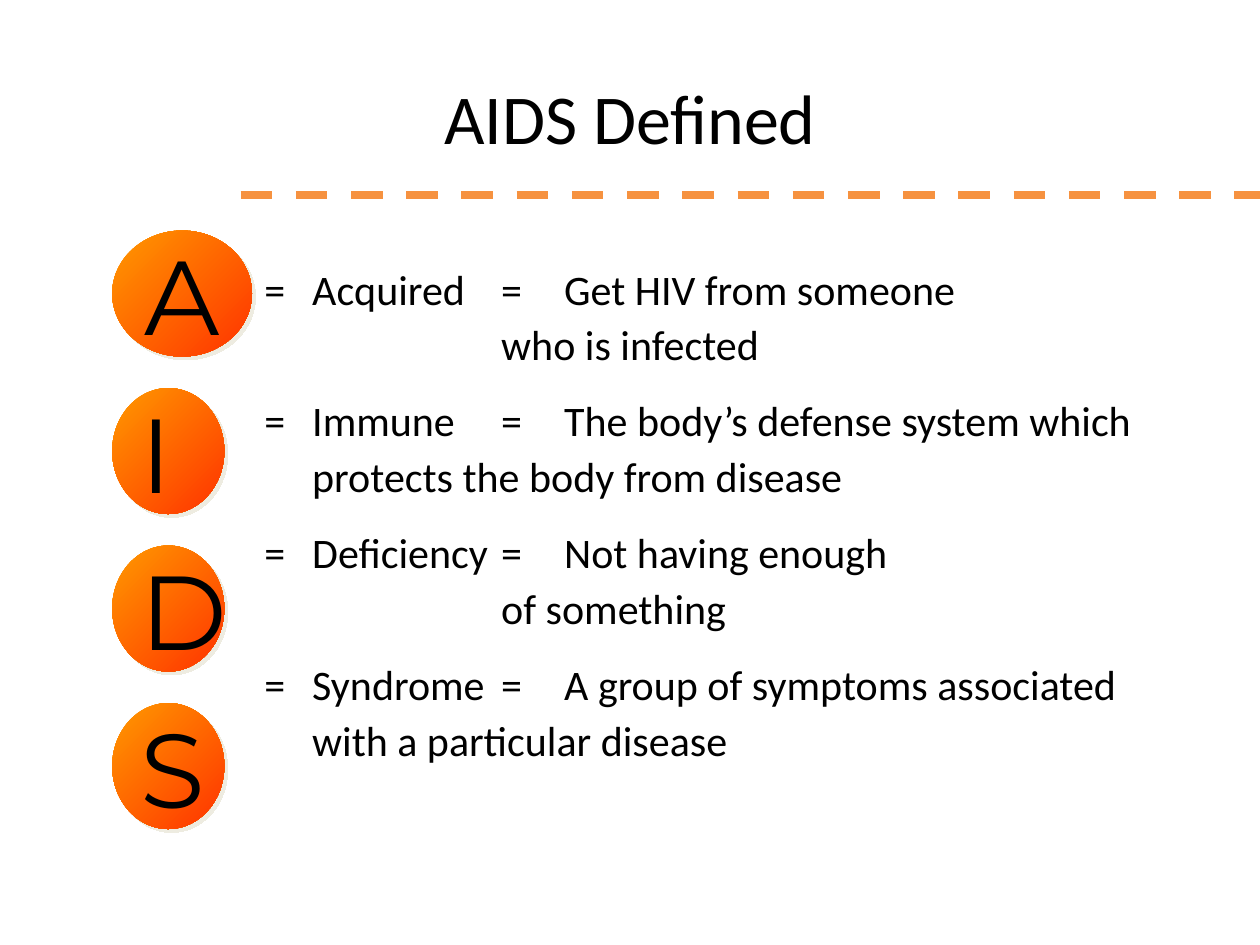
from lxml import etree
from pptx import Presentation
from pptx import util as u
from pptx.dml.color import RGBColor
from pptx.enum import dml, shapes, text
from pptx.oxml.ns import qn
from pptx.util import Inches

COLORS = {"text": "000000", "start": "FF9900", "end": "FF3300",
          "shadow": "EEECE1", "rule": "F69240"}


def rgb(name):
    return RGBColor.from_string(COLORS[name])


def style(font, name, size):
    font.name, font.size = name, u.Pt(size)
    font.color.rgb = rgb("text")


deck = Presentation()
deck.slide_width, deck.slide_height = Inches(10), Inches(7.5)
page = deck.slides.add_slide(deck.slide_layouts[5])

# Title
title = page.shapes.title
title.left, title.top = Inches(0.5), Inches(0.3)
title.width, title.height = Inches(9), Inches(1.25)
title.text_frame.vertical_anchor = text.MSO_ANCHOR.MIDDLE
para = title.text_frame.paragraphs[0]
para.text = "AIDS Defined"
para.alignment = text.PP_ALIGN.CENTER
style(para.font, "Calibri", 40)

# Letter circles, the first one wider
for row, letter in enumerate("AIDS"):
    circle = page.shapes.add_shape(
        shapes.MSO_SHAPE.OVAL, Inches(0.89), Inches(1.83 + 1.25 * row),
        Inches(1.11 if row == 0 else 0.89), Inches(1))
    circle.fill.gradient()
    circle.fill.gradient_angle = 315
    for stop, name, position in zip(circle.fill.gradient_stops, ("start", "end"), (0, 1)):
        stop.color.rgb = rgb(name)
        stop.position = position
    circle.line.fill.background()

    # Hard shadow towards the lower right
    circle.shadow.inherit = False
    effects = circle._element.spPr.find(qn("a:effectLst"))
    shadow = etree.SubElement(effects, qn("a:outerShdw"), dist=str(u.Pt(2.8)),
                              dir="2700000", algn="ctr", rotWithShape="0")
    etree.SubElement(shadow, qn("a:srgbClr"), val=COLORS["shadow"])

    frame = circle.text_frame
    frame.word_wrap = False
    frame.vertical_anchor = text.MSO_ANCHOR.MIDDLE
    para = frame.paragraphs[0]
    para.text = letter
    para.alignment = text.PP_ALIGN.LEFT
    style(para.font, "Montserrat", 60)

# Definitions
definitions = [
    "=\tAcquired\t=\tGet HIV from someone \v\t\t\twho is infected",
    "=\tImmune\t=\tThe body’s defense system which \t\t\tprotects the body from disease",
    "=\tDeficiency\t=\tNot having enough \v\t\t\tof something",
    "=\tSyndrome\t=\tA group of symptoms associated \t\t\twith a particular disease",
]
box = page.shapes.add_textbox(Inches(2), Inches(2), Inches(7.93), Inches(5))
frame = box.text_frame
frame.word_wrap = True
for row, definition in enumerate(definitions):
    para = frame.add_paragraph() if row else frame.paragraphs[0]
    para.text = definition
    para.line_spacing = 1.1
    para.space_before = u.Pt(12)
    properties = para._p.get_or_add_pPr()
    properties.set("marL", str(Inches(0.38)))
    properties.set("indent", str(Inches(-0.38)))
    tabs = etree.SubElement(properties, qn("a:tabLst"))
    for position in (1, 2.29, 2.72):
        etree.SubElement(tabs, qn("a:tab"), pos=str(Inches(position)), algn="l")
    style(para.font, "Calibri", 24)

# Dashed rule under the title
rule = page.shapes.add_connector(shapes.MSO_CONNECTOR.STRAIGHT,
                                 Inches(1.91), Inches(1.55), Inches(10), Inches(1.55))
rule.line.color.rgb = rgb("rule")
rule.line.width = u.Pt(4.5)
rule.line.dash_style = dml.MSO_LINE.DASH
etree.SubElement(rule._element.spPr, qn("a:effectLst"))

deck.save("out.pptx")
